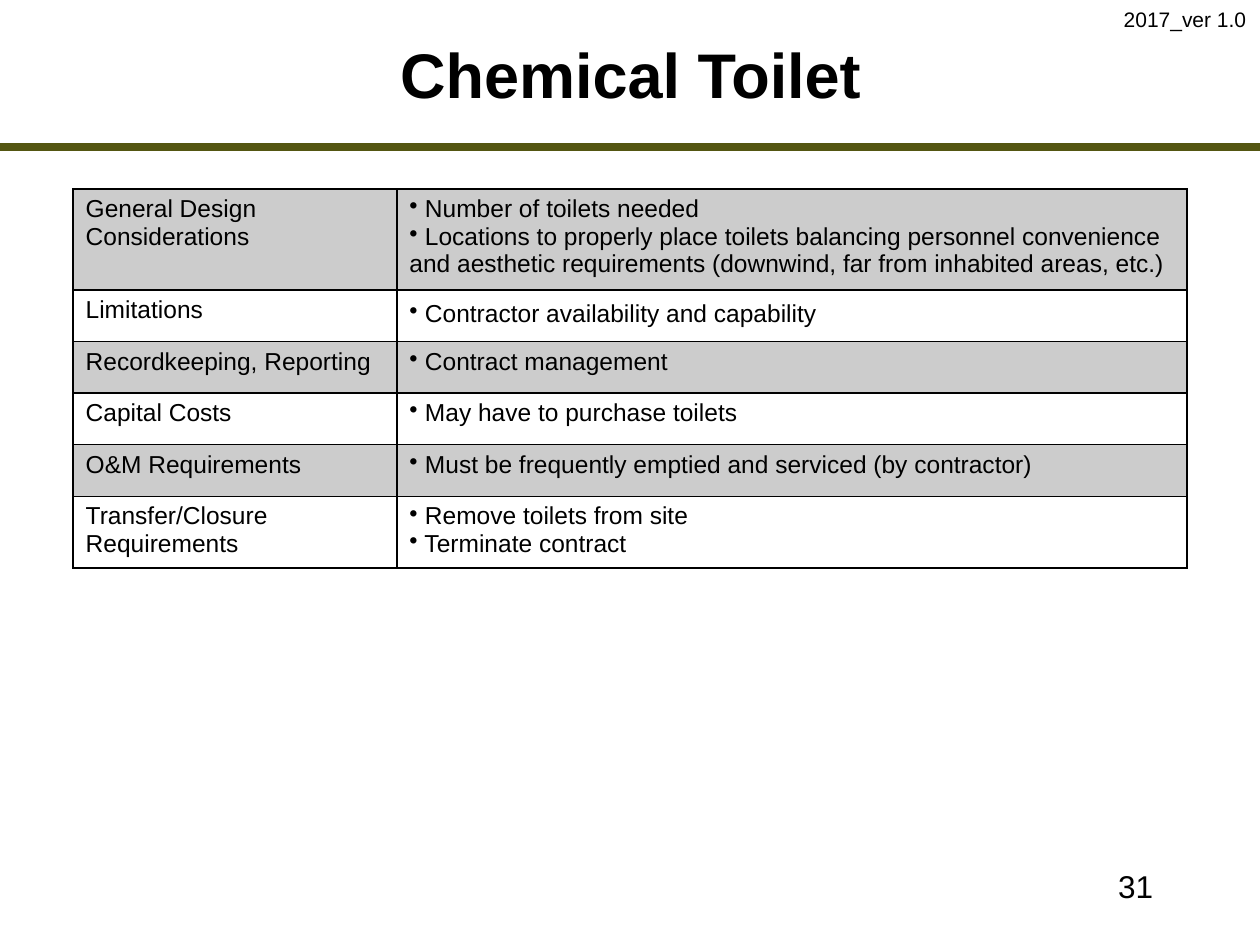
from lxml.etree import SubElement
from pptx import Presentation
from pptx.dml.color import RGBColor
from pptx.enum.shapes import MSO_CONNECTOR
from pptx.enum.text import MSO_ANCHOR, MSO_AUTO_SIZE, PP_ALIGN
from pptx.oxml.ns import qn
from pptx.util import Inches, Pt

COLORS = {"text": "000000", "rule": "545612", "band": "000000", "border": "000000"}
FONT = "Arial"
BAND_OPACITY = 20000  # thousandths of a percent

COLUMN_WIDTHS = [2.57, 6.27]
# Row height, topic, bullet points
ROWS = [
    (0.8, "General Design Considerations", [
        "Number of toilets needed",
        "Locations to properly place toilets balancing personnel convenience "
        "and aesthetic requirements (downwind, far from inhabited areas, etc.)"]),
    (0.41, "Limitations", ["Contractor availability and capability"]),
    (0.41, "Recordkeeping, Reporting", ["Contract management"]),
    (0.41, "Capital Costs", ["May have to purchase toilets"]),
    (0.41, "O&M Requirements", ["Must be frequently emptied and serviced (by contractor)"]),
    (0.57, "Transfer/Closure Requirements", [
        "Remove toilets from site", "Terminate contract"]),
]


def color(name):
    return RGBColor.from_string(COLORS[name])


def add_span(para, text, size, bold=False):
    span = para.add_run()
    span.text = text
    span.font.name = FONT
    span.font.size = Pt(size)
    span.font.bold = bold
    span.font.color.rgb = color("text")


def set_title(page, text):
    title = page.shapes.title
    title.left, title.top = Inches(1.17), Inches(0.17)
    title.width, title.height = Inches(7.67), Inches(0.83)
    title.text_frame.vertical_anchor = MSO_ANCHOR.MIDDLE
    para = title.text_frame.paragraphs[0]
    para.alignment = PP_ALIGN.CENTER
    add_span(para, text, 36, bold=True)


def add_label(page, text, left, top, width, height, size, align, wrap=True):
    box = page.shapes.add_textbox(Inches(left), Inches(top), Inches(width), Inches(height))
    frame = box.text_frame
    frame.word_wrap = wrap
    if not wrap:
        frame.auto_size = MSO_AUTO_SIZE.SHAPE_TO_FIT_TEXT
    para = frame.paragraphs[0]
    para.alignment = align
    add_span(para, text, size)


def add_rule(page, top, width):
    rule = page.shapes.add_connector(
        MSO_CONNECTOR.STRAIGHT, 0, Inches(top), Inches(width), Inches(top))
    rule.line.color.rgb = color("rule")
    rule.line.width = Pt(4.5)
    SubElement(rule._element.spPr, qn("a:effectLst"))


def style_cell(cell, banded):
    properties = cell._tc.get_or_add_tcPr()
    for side in ("lnL", "lnR", "lnT", "lnB"):
        line = SubElement(properties, qn(f"a:{side}"), w=str(Pt(1)))
        fill = SubElement(line, qn("a:solidFill"))
        SubElement(fill, qn("a:srgbClr"), val=COLORS["border"])
    if banded:
        cell.fill.solid()
        cell.fill.fore_color.rgb = color("band")
        tint = properties.find(qn("a:solidFill")).find(qn("a:srgbClr"))
        SubElement(tint, qn("a:alpha"), val=str(BAND_OPACITY))
    else:
        cell.fill.background()


def fill_bullets(cell, points):
    frame = cell.text_frame
    for index, point in enumerate(points):
        para = frame.add_paragraph() if index else frame.paragraphs[0]
        SubElement(para._p.get_or_add_pPr(), qn("a:buChar"), char="•")
        add_span(para, " " + point, 14)


def add_topic_table(page):
    table = page.shapes.add_table(
        len(ROWS), len(COLUMN_WIDTHS), Inches(0.58), Inches(1.5),
        Inches(sum(COLUMN_WIDTHS)), Inches(sum(row[0] for row in ROWS))).table
    table.first_row = table.horz_banding = False
    for column, width in zip(table.columns, COLUMN_WIDTHS):
        column.width = Inches(width)
    for index, (height, topic, points) in enumerate(ROWS):
        table.rows[index].height = Inches(height)
        topic_cell, points_cell = table.cell(index, 0), table.cell(index, 1)
        for cell in (topic_cell, points_cell):
            style_cell(cell, banded=index % 2 == 0)
        add_span(topic_cell.text_frame.paragraphs[0], topic, 14)
        fill_bullets(points_cell, points)
    # The limitations entry is set with looser lines
    table.cell(1, 1).text_frame.paragraphs[0].line_spacing = 1.15


def main():
    deck = Presentation()
    deck.slide_width, deck.slide_height = Inches(10), Inches(7.5)
    page = deck.slides.add_slide(deck.slide_layouts[5])

    # Heading and rule
    add_rule(page, 1.17, 10)
    set_title(page, "Chemical Toilet")

    # Body
    add_topic_table(page)

    # Page number and version
    add_label(page, "31", 7.17, 6.83, 2.08, 0.5, 18, PP_ALIGN.RIGHT)
    add_label(page, "2017_ver 1.0", 8.82, 0, 1.18, 0.3, 12, PP_ALIGN.LEFT, wrap=False)

    deck.save("out.pptx")


if __name__ == "__main__":
    main()
